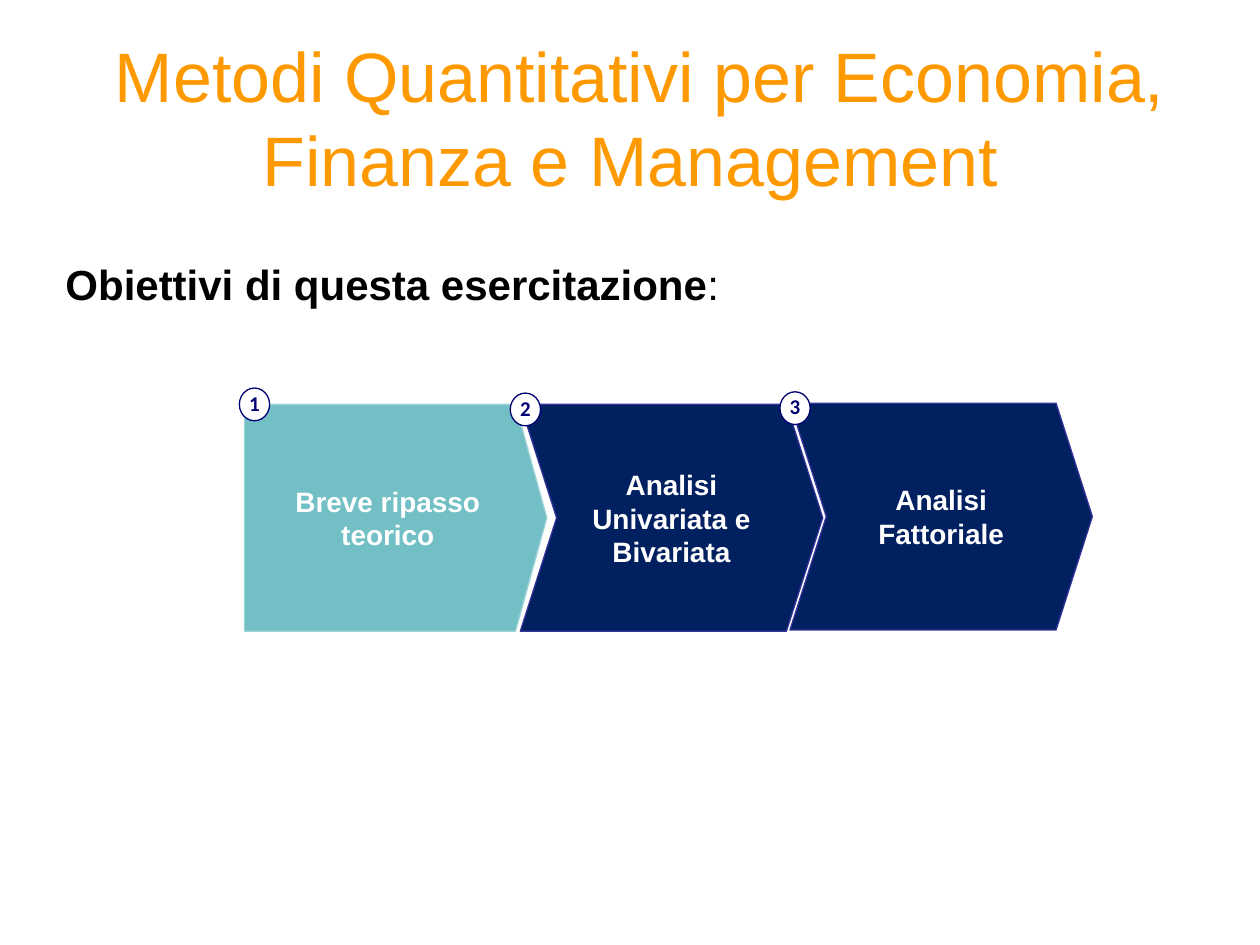
from pptx import Presentation
from pptx.dml.color import RGBColor
from pptx.enum.shapes import MSO_SHAPE
from pptx.enum.text import MSO_ANCHOR, PP_ALIGN
from pptx.util import Inches, Pt

PENTAGON, CHEVRON, OVAL = MSO_SHAPE.PENTAGON, MSO_SHAPE.CHEVRON, MSO_SHAPE.OVAL
TOP, MIDDLE = MSO_ANCHOR.TOP, MSO_ANCHOR.MIDDLE
LEFT, CENTER = PP_ALIGN.LEFT, PP_ALIGN.CENTER

ORANGE = RGBColor(0xFF, 0x99, 0x00)
BLACK = RGBColor(0x00, 0x00, 0x00)
WHITE = RGBColor(0xFF, 0xFF, 0xFF)
TEAL = RGBColor(0x72, 0xBF, 0xC5)
PALE_TEAL = RGBColor(0x9E, 0xD3, 0xD7)
NAVY = RGBColor(0x00, 0x20, 0x60)
INDIGO = RGBColor(0x33, 0x33, 0x99)
BADGE_BLUE = RGBColor(0x00, 0x00, 0x74)

STEP_W, STEP_H = 2.4, 1.8
BADGE_W, BADGE_H = 0.24, 0.26
STEPS = [
    ("Breve ripasso teorico", PENTAGON, 0.138, TEAL, PALE_TEAL, (0, 0.01), (-0.04, -0.13)),
    ("Analisi Univariata e Bivariata", CHEVRON, 0.16, NAVY, INDIGO, (2.19, 0.01), (-0.08, -0.09)),
    ("Analisi Fattoriale", CHEVRON, 0.16, NAVY, INDIGO, (4.33, 0), (-0.08, -0.09)),
]


def write(tf, runs, size, color, font="Arial", align=CENTER, anchor=MIDDLE):
    tf.vertical_anchor = anchor
    p = tf.paragraphs[0]
    p.alignment = align
    for text, bold in runs:
        r = p.add_run()
        r.text = text
        r.font.name = font
        r.font.size = Pt(size)
        r.font.bold = bold
        r.font.color.rgb = color
    return p


def add_text(slide, box, runs, size, color, **layout):
    tf = slide.shapes.add_textbox(*map(Inches, box)).text_frame
    tf.word_wrap = True
    write(tf, runs, size, color, **layout)
    return tf


def add_outlined(slide, kind, box, fill, line):
    sp = slide.shapes.add_shape(kind, *map(Inches, box))
    sp.shadow.inherit = False
    sp.fill.solid()
    sp.fill.fore_color.rgb = fill
    sp.line.color.rgb = line
    sp.line.width = Pt(0.75)
    return sp


def add_title(slide, box):
    title = " Metodi Quantitativi per Economia, Finanza e Management"
    add_text(slide, box, [(title, False)], 40, ORANGE)


def add_heading(slide, box):
    runs = [("Obiettivi di questa esercitazione", True), (":", False)]
    tf = add_text(slide, box, runs, 24, BLACK, align=LEFT, anchor=TOP)
    tf.margin_left = Inches(0.19)


def add_badge(slide, box, number):
    sp = add_outlined(slide, OVAL, box, WHITE, BADGE_BLUE)
    sp.text_frame.word_wrap = False
    p = write(sp.text_frame, [(str(number), True)], 12, BADGE_BLUE, font="Calibri")
    p.line_spacing = 0.9


def add_step(slide, box, label, kind, point, fill, line):
    sp = add_outlined(slide, kind, box, fill, line)
    sp.adjustments[0] = point
    tf = sp.text_frame
    tf.word_wrap = True
    tf.margin_left = tf.margin_right = Inches(0.08)
    tf.margin_top = tf.margin_bottom = Inches(0.04)
    write(tf, [(label, True)], 16, WHITE)


def add_process(slide, left, top):
    for number, (label, kind, point, fill, line, (dx, dy), (bx, by)) in enumerate(STEPS, 1):
        x, y = left + dx, top + dy
        add_step(slide, (x, y, STEP_W, STEP_H), label, kind, point, fill, line)
        add_badge(slide, (x + bx, y + by, BADGE_W, BADGE_H), number)


def main():
    prs = Presentation()
    prs.slide_width, prs.slide_height = Inches(10), Inches(7.5)
    slide = prs.slides.add_slide(prs.slide_layouts[6])
    add_title(slide, (0.5, 0.3, 9, 1.25))
    add_heading(slide, (0.33, 2, 9.5, 3.53))
    add_process(slide, 1.94, 3.2)
    prs.save("out.pptx")


if __name__ == "__main__":
    main()
